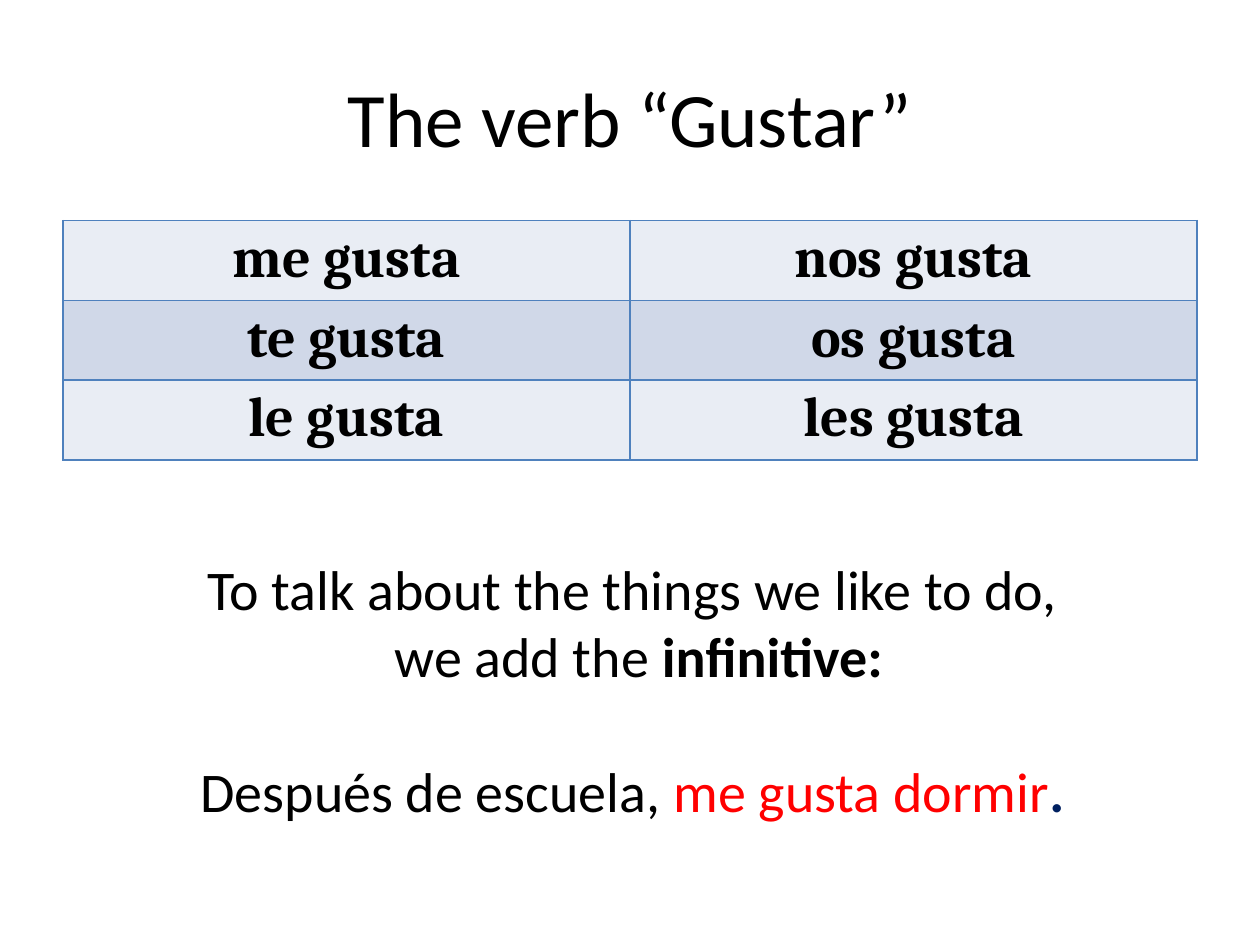
from lxml import etree
from pptx import Presentation
from pptx import util as u
from pptx.dml.color import RGBColor
from pptx.enum import text
from pptx.oxml.ns import qn

BLACK = RGBColor(0, 0, 0)
RED = RGBColor(0xFF, 0, 0)
NAVY = RGBColor(0, 0x20, 0x60)
BORDER = RGBColor(0x4F, 0x81, 0xBD)
BANDS = (RGBColor(0xE9, 0xED, 0xF4), RGBColor(0xD0, 0xD8, 0xE8))

CONJUGATIONS = [
    ("me gusta", "nos gusta"),
    ("te gusta", "os gusta"),
    ("le gusta", "les gusta"),
]
EXPLANATION = [
    [("To talk about the things we like to do, ", BLACK, False)],
    [("we add the ", BLACK, False), ("infinitive:", BLACK, True)],
    [("Después de escuela, ", BLACK, False),
     ("me gusta dormir", RED, False), (". ", NAVY, True)],
]


def add_run(paragraph, words, size, font="Calibri", color=BLACK, bold=False):
    """Append one styled run to a centred paragraph."""
    paragraph.alignment = text.PP_ALIGN.CENTER
    run = paragraph.add_run()
    run.text = words
    run.font.name = font
    run.font.size = u.Pt(size)
    run.font.bold = bold
    run.font.color.rgb = color


def add_frame(slide, box, anchor):
    """Add a wrapping text box and return its text frame."""
    frame = slide.shapes.add_textbox(*map(u.Inches, box)).text_frame
    frame.word_wrap = True
    frame.vertical_anchor = anchor
    return frame


def add_title(slide, box):
    """Place the slide title in the middle of its box."""
    title = add_frame(slide, box, text.MSO_ANCHOR.MIDDLE)
    add_run(title.paragraphs[0], "The verb “Gustar”", 44)


def outline_cell(cell):
    """Draw a thin border on all four sides of a cell."""
    properties = cell._tc.get_or_add_tcPr()
    for position, side in enumerate(("a:lnL", "a:lnR", "a:lnT", "a:lnB")):
        line = etree.Element(qn(side), w=str(u.Pt(1)))
        fill = etree.SubElement(line, qn("a:solidFill"))
        etree.SubElement(fill, qn("a:srgbClr"), val=str(BORDER))
        properties.insert(position, line)


def add_conjugations(slide, box):
    """Place the banded table of verb forms."""
    rows, columns = len(CONJUGATIONS), len(CONJUGATIONS[0])
    table = slide.shapes.add_table(rows, columns, *map(u.Inches, box)).table
    table.first_row = False
    for row, forms in enumerate(CONJUGATIONS):
        for column, form in enumerate(forms):
            cell = table.cell(row, column)
            cell.fill.solid()
            cell.fill.fore_color.rgb = BANDS[row % 2]
            outline_cell(cell)
            add_run(cell.text_frame.paragraphs[0], form, 32, "Cambria", bold=True)


def add_explanation(slide, box):
    """Place the rule and, after a gap, its example sentence."""
    frame = add_frame(slide, box, text.MSO_ANCHOR.TOP)
    frame.auto_size = text.MSO_AUTO_SIZE.SHAPE_TO_FIT_TEXT
    for index, parts in enumerate(EXPLANATION):
        paragraph = frame.add_paragraph() if index else frame.paragraphs[0]
        for words, color, bold in parts:
            add_run(paragraph, words, 32, color=color, bold=bold)
    frame.paragraphs[-1].space_before = u.Pt(39)


def main():
    """Build and save the slide."""
    deck = Presentation()
    deck.slide_width, deck.slide_height = u.Inches(10), u.Inches(7.5)
    slide = deck.slides.add_slide(deck.slide_layouts[6])
    add_title(slide, (0.5, 0.3, 9, 1.25))
    add_conjugations(slide, (0.5, 1.75, 9, 1.84))
    add_explanation(slide, (0.82, 4.35, 8.5, 2.26))
    deck.save("out.pptx")


if __name__ == "__main__":
    main()
